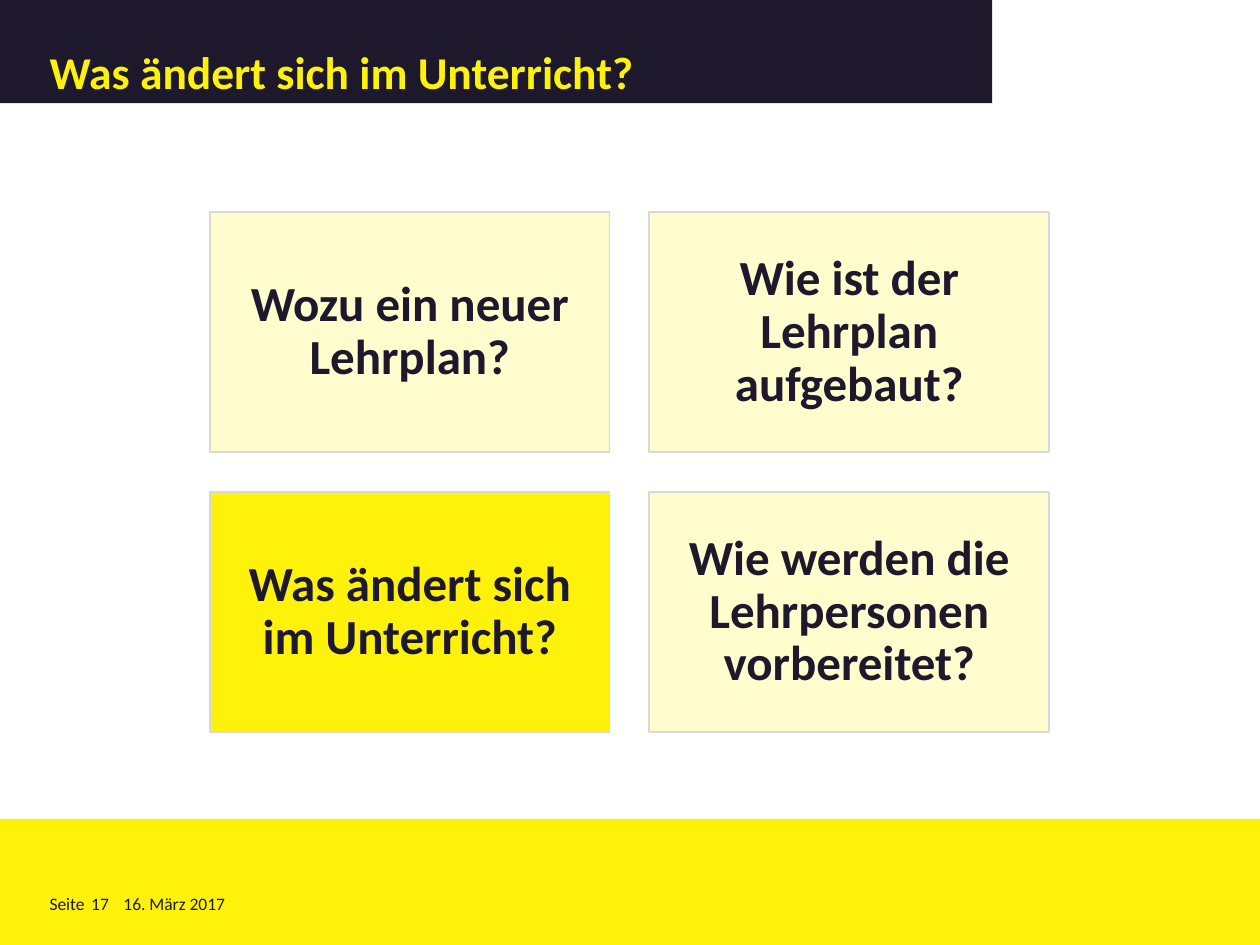
from pptx import Presentation
from pptx.dml.color import RGBColor
from pptx.enum.shapes import MSO_SHAPE as Preset
from pptx.enum.text import MSO_ANCHOR as Anchor, MSO_AUTO_SIZE as AutoSize, PP_ALIGN as Align
from pptx.util import Cm, Pt

DARK, YELLOW, PALE, GREY = "1D182C", "FEF20A", "FFFCCE", "D9D9D9"


def color(value):
    return RGBColor.from_string(value)


class SlideBuilder:
    font = "Calibri"

    def __init__(self, page):
        self.page = page

    def set_text(self, shape, text, size, tint, bold=False, align=Align.LEFT,
                 anchor=Anchor.TOP, insets=(0, 0, 0, 0), spacing=1.0):
        frame = shape.text_frame
        frame.word_wrap = True
        frame.auto_size = AutoSize.NONE
        frame.vertical_anchor = anchor
        (frame.margin_left, frame.margin_top,
         frame.margin_right, frame.margin_bottom) = map(Cm, insets)
        para = frame.paragraphs[0]
        para.alignment = align
        para.line_spacing = spacing
        span = para.add_run()
        span.text = text
        span.font.name = self.font
        span.font.size = Pt(size)
        span.font.bold = bold
        span.font.color.rgb = color(tint)

    def title(self, text, width, height):
        title = self.page.shapes.title
        title.left, title.top = Cm(0), Cm(0)
        title.width, title.height = Cm(width), Cm(height)
        title.fill.solid()
        title.fill.fore_color.rgb = color(DARK)
        self.set_text(title, text, 26, YELLOW, bold=True, anchor=Anchor.BOTTOM,
                      insets=(1, 0.2, 0.2, 0.1), spacing=0.8)

    def block(self, left, top, width, height, fill, line=None):
        block = self.page.shapes.add_shape(
            Preset.RECTANGLE, Cm(left), Cm(top), Cm(width), Cm(height))
        block.shadow.inherit = False
        block.fill.solid()
        block.fill.fore_color.rgb = color(fill)
        if line:
            block.line.color.rgb = color(line)
            block.line.width = Pt(1)
        else:
            block.line.fill.background()
        return block

    def card(self, text, left, top, width, height, fill):
        card = self.block(left, top, width, height, fill, GREY)
        self.set_text(card, text, 28, DARK, bold=True, align=Align.CENTER,
                      anchor=Anchor.MIDDLE, insets=(0.3,) * 4, spacing=0.9)

    def label(self, text, left, top, width):
        box = self.page.shapes.add_textbox(Cm(left), Cm(top), Cm(width), Cm(0.43))
        self.set_text(box, text, 10, DARK)


def main():
    deck = Presentation()
    deck.slide_width, deck.slide_height = Cm(25.4), Cm(19.05)
    builder = SlideBuilder(deck.slides.add_slide(deck.slide_layouts[5]))

    heading = "Was ändert sich im Unterricht?"
    builder.block(0, 16.51, 25.4, 2.54, YELLOW)
    builder.title(heading, 20, 2.08)

    for text, left, width in (("Seite", 1, 0.9), ("17", 1.84, 0.6),
                              ("16. März 2017", 2.49, 5.8)):
        builder.label(text, left, 18.01, width)

    questions = ("Wozu ein neuer Lehrplan?", "Wie ist der Lehrplan aufgebaut?",
                 heading, "Wie werden die Lehrpersonen vorbereitet?")
    width, height, gap = 8.06, 4.84, 0.8
    for index, question in enumerate(questions):
        row, column = divmod(index, 2)
        builder.card(question, 4.23 + column * (width + gap),
                     4.28 + row * (height + gap), width, height,
                     YELLOW if question == heading else PALE)

    deck.save("out.pptx")


if __name__ == "__main__":
    main()
